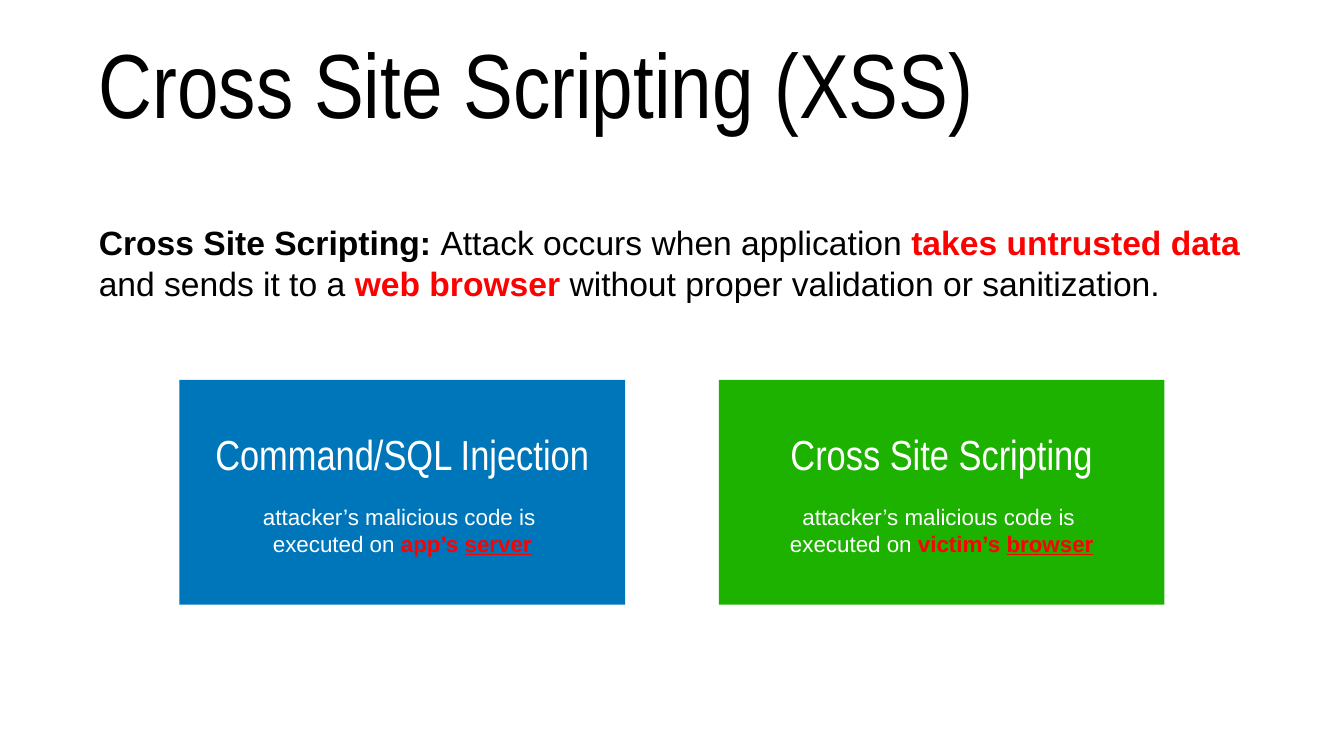
"""Build the Cross Site Scripting slide."""
from pptx import Presentation
from pptx.dml.color import RGBColor
from pptx.enum.shapes import MSO_SHAPE
from pptx.enum.text import MSO_ANCHOR, MSO_AUTO_SIZE, PP_ALIGN
from pptx.oxml.xmlchemy import OxmlElement
from pptx.util import Inches, Pt

COLORS = {"black": "000000", "white": "FFFFFF", "red": "FF0000",
          "blue": "0076BA", "green": "1DB100"}
TITLE = "Cross Site Scripting (XSS)"
DEFINITION = [
    ("Cross Site Scripting: ", {"bold": True}),
    ("Attack occurs when application ", {}),
    ("takes untrusted data ", {"bold": True, "color": "red"}),
    ("and sends it to a ", {}),
    ("web browser ", {"bold": True, "color": "red"}),
    ("without proper validation or sanitization.", {}),
]
EXECUTION = ("attacker’s malicious code is ", "executed on ")
ATTACKS = [
    ("Command/SQL Injection", "app’s ", "server", "blue"),
    ("Cross Site Scripting", "victim’s ", "browser", "green"),
]
MARGIN, CONTENT_WIDTH = 0.92, 11.49
CARD_LEFT, CARD_TOP, CARD_WIDTH, CARD_HEIGHT, CARD_STEP = 1.78, 3.77, 4.42, 2.23, 5.35


def rgb(name):
    return RGBColor.from_string(COLORS[name])


def place(shape, left, top, width, height):
    shape.left, shape.top = Inches(left), Inches(top)
    shape.width, shape.height = Inches(width), Inches(height)


def set_frame(frame, inset):
    frame.word_wrap = True
    frame.auto_size = MSO_AUTO_SIZE.NONE
    frame.vertical_anchor = MSO_ANCHOR.MIDDLE
    frame.margin_left = frame.margin_right = Inches(inset)
    frame.margin_top = frame.margin_bottom = Inches(inset)


def style(paragraph, font, size, color, align, before=0):
    paragraph.font.name, paragraph.font.size = font, Pt(size)
    paragraph.font.color.rgb = rgb(color)
    paragraph.alignment = align
    paragraph.space_before = Pt(before)


def add_run(paragraph, text, bold=False, color=None, underline=False):
    run = paragraph.add_run()
    run.text = text
    if bold:
        run.font.bold = True
    if underline:
        run.font.underline = True
    if color:
        run.font.color.rgb = rgb(color)


def remove_bullet(paragraph):
    properties = paragraph._p.get_or_add_pPr()
    properties.set("marL", "0")
    properties.set("indent", "0")
    properties.append(OxmlElement("a:buNone"))


def add_card(slide, index, heading, owner, place_of_attack, color):
    card = slide.shapes.add_shape(
        MSO_SHAPE.RECTANGLE, Inches(CARD_LEFT + index * CARD_STEP), Inches(CARD_TOP),
        Inches(CARD_WIDTH), Inches(CARD_HEIGHT))
    card.shadow.inherit = False
    card.fill.solid()
    card.fill.fore_color.rgb = rgb(color)
    card.line.fill.background()
    set_frame(card.text_frame, 0)
    top_line = card.text_frame.paragraphs[0]
    style(top_line, "Arial Narrow", 30, "white", PP_ALIGN.CENTER)
    add_run(top_line, heading)
    detail = card.text_frame.add_paragraph()
    style(detail, "Arial", 16, "white", PP_ALIGN.CENTER, 17.5)
    add_run(detail, EXECUTION[0])
    detail.add_line_break()
    add_run(detail, EXECUTION[1])
    add_run(detail, owner, bold=True, color="red")
    add_run(detail, place_of_attack, bold=True, color="red", underline=True)


def main():
    deck = Presentation()
    deck.slide_width, deck.slide_height = Inches(13.33), Inches(7.5)
    slide = deck.slides.add_slide(deck.slide_layouts[1])

    title, body = slide.placeholders
    place(title, MARGIN, 0.19, CONTENT_WIDTH, 1.25)
    set_frame(title.text_frame, 0.06)
    heading = title.text_frame.paragraphs[0]
    style(heading, "Arial Narrow", 65, "black", PP_ALIGN.LEFT)
    add_run(heading, TITLE)

    place(body, MARGIN, 1.92, CONTENT_WIDTH, 1.37)
    set_frame(body.text_frame, 0.06)
    definition = body.text_frame.paragraphs[0]
    style(definition, "Arial", 24, "black", PP_ALIGN.LEFT, 3)
    remove_bullet(definition)
    for text, look in DEFINITION:
        add_run(definition, text, **look)

    for index, attack in enumerate(ATTACKS):
        add_card(slide, index, *attack)
    deck.save("out.pptx")


if __name__ == "__main__":
    main()
